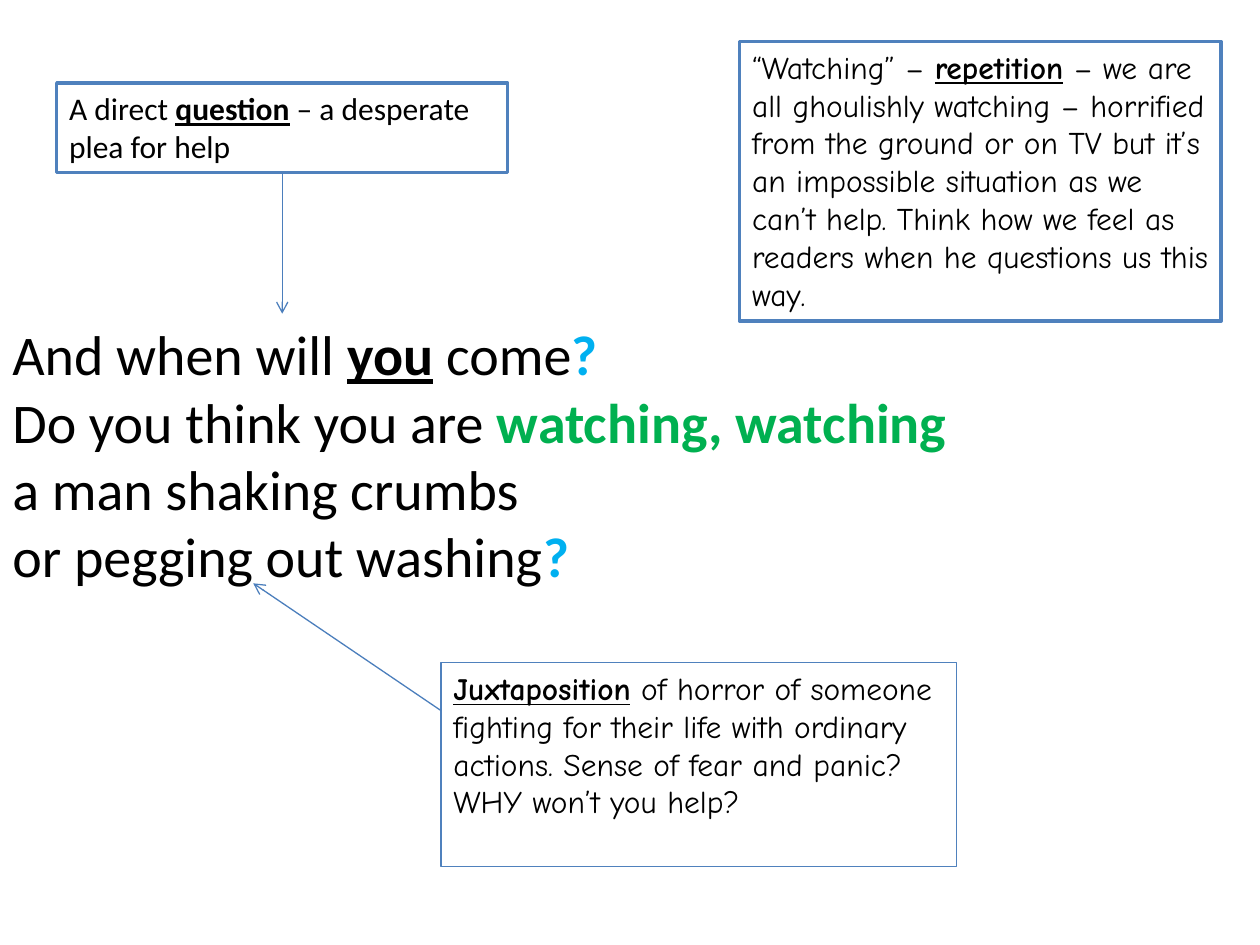
from dataclasses import dataclass

from lxml import etree
from pptx import Presentation
from pptx.dml.color import RGBColor
from pptx.enum import shapes, text
from pptx.oxml import ns
from pptx.util import Inches, Pt


@dataclass(frozen=True)
class Theme:
    ink: str = "000000"
    paper: str = "FFFFFF"
    border: str = "4F81BD"
    arrow: str = "4B7EBC"
    question: str = "00B0F0"
    watching: str = "00B050"
    poem_size: int = 32
    note_size: int = 18
    plain_font: str = "Calibri"
    comic_font: str = "Comic Neue"
    thin: float = 0.75
    thick: float = 2


theme = Theme()
presentation = Presentation()
presentation.slide_width = Inches(10)
presentation.slide_height = Inches(7.5)
slide = presentation.slides.add_slide(presentation.slide_layouts[6])


def share(x, y):
    return int(presentation.slide_width * x / 100), int(presentation.slide_height * y / 100)


def write(text_frame, lines, font, size):
    text_frame.word_wrap = True
    text_frame.vertical_anchor = text.MSO_ANCHOR.TOP
    text_frame.text = "\n".join("" for line in lines)
    for paragraph, line in zip(text_frame.paragraphs, lines):
        paragraph.alignment = text.PP_ALIGN.LEFT
        for words, color, bold, underline in line:
            run = paragraph.add_run()
            run.text = words
            run.font.name = font
            run.font.size = Pt(size)
            run.font.bold = bold
            run.font.underline = underline
            run.font.color.rgb = RGBColor.from_string(color)


poem = [
    [("And when will ", theme.ink, False, False), ("you", theme.ink, True, True),
     (" come", theme.ink, False, False), ("?", theme.question, True, False)],
    [("Do you think you are ", theme.ink, False, False),
     ("watching, watching", theme.watching, True, False)],
    [("a man shaking crumbs", theme.ink, False, False)],
    [("or pegging out washing", theme.ink, False, False), ("?", theme.question, True, False)],
]
poem_box = slide.shapes.add_textbox(*share(0, 33.2), *share(100, 30.13))
write(poem_box.text_frame, poem, theme.plain_font, theme.poem_size)

notes = [
    (35, 70.13, 40.9, 21.6, False, theme.thin, theme.comic_font,
     ("", "Juxtaposition", " of horror of someone fighting for their life with ordinary "
      "actions. Sense of fear and panic? WHY won’t you help?")),
    (58.7, 4.4, 38.2, 29.6, True, theme.thick, theme.comic_font,
     ("“Watching” – ", "repetition", " – we are all ghoulishly watching – horrified from the "
      "ground or on TV but it’s an impossible situation as we can’t help. Think how we feel "
      "as readers when he questions us this way.")),
    (4.5, 8.8, 35.8, 9.47, True, theme.thick, theme.plain_font,
     ("A direct ", "question", " – a desperate plea for help")),
]
for left, top, width, height, filled, weight, font, (before, term, after) in notes:
    note = slide.shapes.add_shape(
        shapes.MSO_SHAPE.RECTANGLE, *share(left, top), *share(width, height))
    note.shadow.inherit = False
    if filled:
        note.fill.solid()
        note.fill.fore_color.rgb = RGBColor.from_string(theme.paper)
    else:
        note.fill.background()
    note.line.color.rgb = RGBColor.from_string(theme.border)
    note.line.width = Pt(weight)
    pieces = [(before, False), (term, True), (after, False)]
    line = [(words, theme.ink, strong, strong) for words, strong in pieces if words]
    write(note.text_frame, [line], font, theme.note_size)

arrows = [((22.4, 18.27), (22.4, 33.2)), ((35, 75.2), (20.1, 61.73))]
for start, end in arrows:
    arrow = slide.shapes.add_connector(
        shapes.MSO_CONNECTOR.STRAIGHT, *share(*start), *share(*end))
    arrow.line.color.rgb = RGBColor.from_string(theme.arrow)
    arrow.line.width = Pt(theme.thin)
    etree.SubElement(arrow.line._get_or_add_ln(), ns.qn("a:tailEnd"), type="arrow")
    etree.SubElement(arrow._element.spPr, ns.qn("a:effectLst"))

presentation.save("out.pptx")
